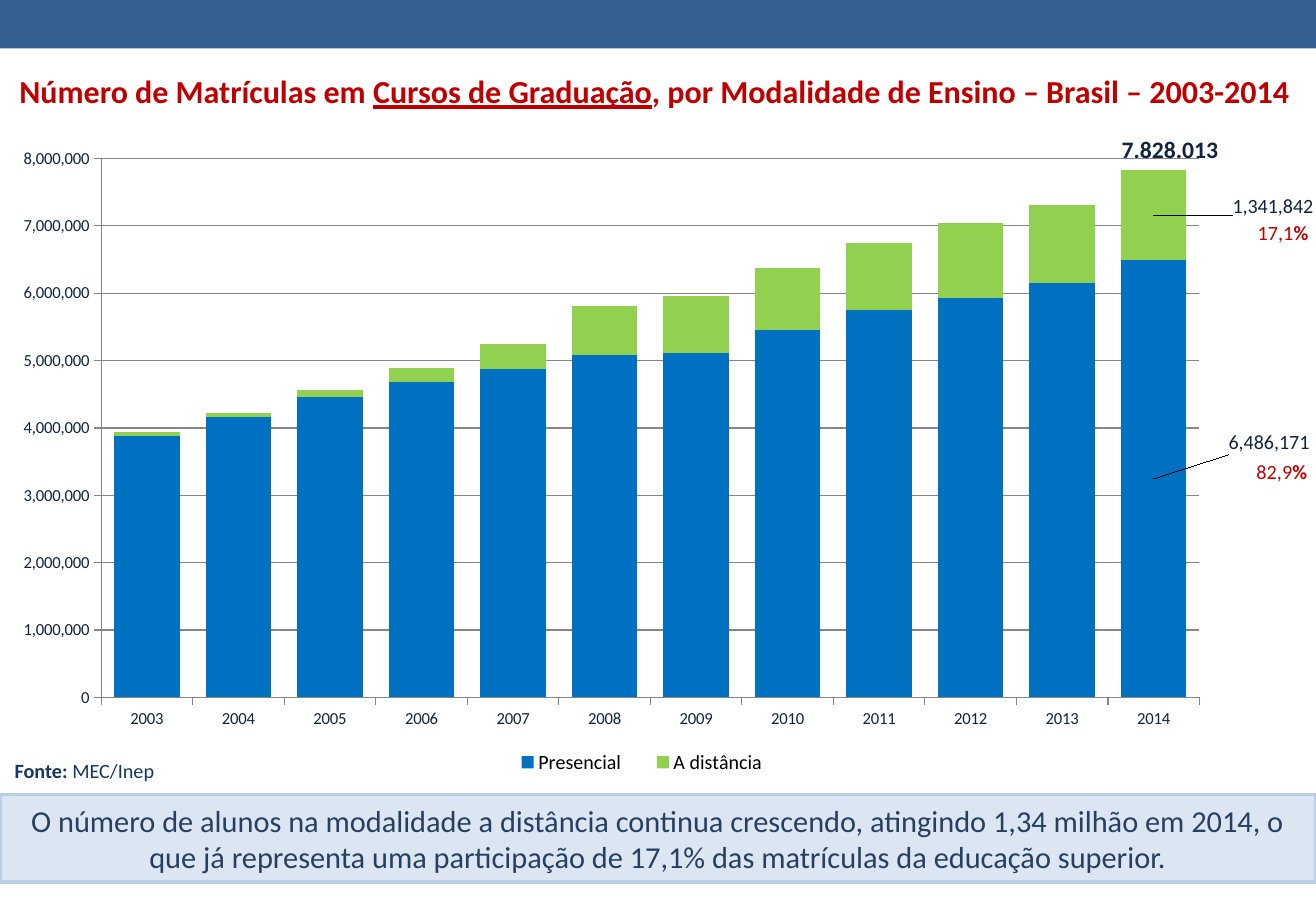
from lxml.etree import SubElement
from pptx import Presentation
from pptx.chart.data import CategoryChartData
from pptx.dml.color import RGBColor
from pptx.enum.chart import XL_CHART_TYPE, XL_LEGEND_POSITION, XL_TICK_MARK
from pptx.enum.shapes import MSO_SHAPE
from pptx.enum.text import MSO_ANCHOR, PP_ALIGN
from pptx.oxml import parse_xml
from pptx.oxml.ns import nsdecls, qn
from pptx.util import Inches, Pt


def style(font, size, color, bold=False):
    font.name = "Calibri"
    font.size = Pt(size)
    font.bold = bold
    font.color.rgb = RGBColor.from_string(color)


def place(**parts):
    layout = parse_xml(
        f'<c:layout {nsdecls("c")}><c:manualLayout/></c:layout>')
    for name, value in parts.items():
        SubElement(layout[0], qn("c:" + name)).set("val", str(value))
    return layout


deck = Presentation()
deck.slide_width = Inches(10.83)
deck.slide_height = Inches(7.5)
slide = deck.slides.add_slide(deck.slide_layouts[6])
shapes = slide.shapes

band = shapes.add_shape(MSO_SHAPE.RECTANGLE, 0, 0, Inches(10.83), Inches(0.4))
band.shadow.inherit = False
band.fill.solid()
band.fill.fore_color.rgb = RGBColor.from_string("376092")
band.line.fill.background()

data = CategoryChartData(number_format="#,##0")
data.categories = [str(year) for year in range(2003, 2015)]
data.add_series("Presencial", [
    3887022, 4163733, 4453156, 4676646, 4880381, 5080056,
    5115896, 5449120, 5746762, 5923838, 6152405, 6486171])
data.add_series("A distância", [
    49911, 59611, 114642, 207206, 369766, 727961,
    838125, 930179, 992927, 1113850, 1153572, 1341842])
chart = shapes.add_chart(XL_CHART_TYPE.COLUMN_STACKED, 0, Inches(1.15),
                         Inches(10.81), Inches(5.34), data).chart
style(chart.font, 10, "000000")
chart.has_title = False
chart.has_legend = True
legend = chart.legend
legend.position = XL_LEGEND_POSITION.BOTTOM
legend.include_in_layout = False
style(legend.font, 12, "000000")
for old in legend._element.findall(qn("c:layout")):
    legend._element.remove(old)
legend._element.find(qn("c:legendPos")).addnext(
    place(xMode="edge", yMode="edge", x=0.38, y=0.93, w=0.23, h=0.06))

plot = chart.plots[0]
plot.gap_width = 40
plot.overlap = 100
plot.vary_by_categories = False

area = chart._chartSpace.chart.plotArea
for old in area.findall(qn("c:layout")):
    area.remove(old)
area.insert(0, place(layoutTarget="inner", xMode="edge", yMode="edge",
                     x=0.078, y=0.029, w=0.847, h=0.831))

for axis in (chart.category_axis, chart.value_axis):
    axis.major_tick_mark = XL_TICK_MARK.OUTSIDE
    axis.minor_tick_mark = XL_TICK_MARK.NONE
    axis.format.line.color.rgb = RGBColor.from_string("868686")
    style(axis.tick_labels.font, 10, "0F243E")
scale = chart.value_axis
scale.minimum_scale = 0
scale.maximum_scale = 8000000
scale.major_unit = 1000000
scale.has_major_gridlines = True
scale.major_gridlines.format.line.color.rgb = RGBColor.from_string("868686")
scale.tick_labels.number_format = "#,##0"
scale.tick_labels.number_format_is_linked = False

looks = [("0070C0", 0.089, -0.056), ("92D050", 0.092, -0.013)]
for part, (color, x, y) in zip(plot.series, looks):
    part.format.fill.solid()
    part.format.fill.fore_color.rgb = RGBColor.from_string(color)
    part.data_labels.show_value = False
    style(part.points[11].data_label.font, 12, "0F243E")
    group = part._element.find(qn("c:dLbls"))
    group.find(qn("c:dLbl")).insert(1, place(x=x, y=y))
    group.append(parse_xml(
        f'<c:extLst {nsdecls("c")}>'
        '<c:ext uri="{CE6537A1-D6FC-4f65-9D91-7224C49458BB}" '
        'xmlns:c15="http://schemas.microsoft.com/office/drawing/2012/chart">'
        '<c15:showLeaderLines val="1"/></c:ext></c:extLst>'))

panel = shapes.add_shape(MSO_SHAPE.RECTANGLE, 0, Inches(6.54),
                         Inches(10.83), Inches(0.72))
panel.shadow.inherit = False
panel.fill.solid()
panel.fill.fore_color.rgb = RGBColor.from_string("DCE6F2")
panel.line.color.rgb = RGBColor.from_string("B9CDE5")
panel.line.width = Pt(2)
frame = panel.text_frame
frame.text = ("O número de alunos na modalidade a distância continua crescendo, "
              "atingindo 1,34 milhão em 2014, o que já representa uma "
              "participação de 17,1% das matrículas da educação superior.")
frame.margin_left = frame.margin_right = Inches(0.12)
frame.margin_top = frame.margin_bottom = Inches(0.06)
frame.paragraphs[0].alignment = PP_ALIGN.CENTER
style(frame.paragraphs[0].runs[0].font, 18, "254061")

table = shapes.add_table(1, 1, Inches(-0.03), Inches(0.5),
                         Inches(10.83), Inches(0.52)).table
table.first_row = False
table.horz_banding = False
cell = table.cell(0, 0)
cell.fill.background()
cell.vertical_anchor = MSO_ANCHOR.MIDDLE
cell.margin_left = cell.margin_right = cell.margin_top = Inches(0.01)
cell.margin_bottom = 0
para = cell.text_frame.paragraphs[0]
para.alignment = PP_ALIGN.CENTER
for words, under in [("Número de Matrículas em ", False),
                     ("Cursos de Graduação", True),
                     (", por Modalidade de Ensino – Brasil – 2003-2014", False)]:
    run = para.add_run()
    run.text = words
    style(run.font, 19, "C00000", True)
    run.font.underline = under

notes = [
    (0, 6.18, 1.4, 0.32, 12, "17375E", [("Fonte: ", True), ("MEC/Inep", False)]),
    (10.23, 1.75, 0.68, 0.32, 12, "C00000", [("17,1", False), ("%", True)]),
    (10.22, 3.72, 0.68, 0.32, 12, "C00000", [("82,9", False), ("%", True)]),
    (9.11, 1.05, 1.19, 0.35, 14, "0F243E", [("7.828.013", True)]),
]
for left, top, width, height, size, color, runs in notes:
    box = shapes.add_textbox(Inches(left), Inches(top),
                             Inches(width), Inches(height))
    frame = box.text_frame
    frame.word_wrap = True
    frame.margin_left = frame.margin_right = Inches(0.12)
    frame.margin_top = frame.margin_bottom = Inches(0.06)
    for words, bold in runs:
        run = frame.paragraphs[0].add_run()
        run.text = words
        style(run.font, size, color, bold)

deck.save("out.pptx")
